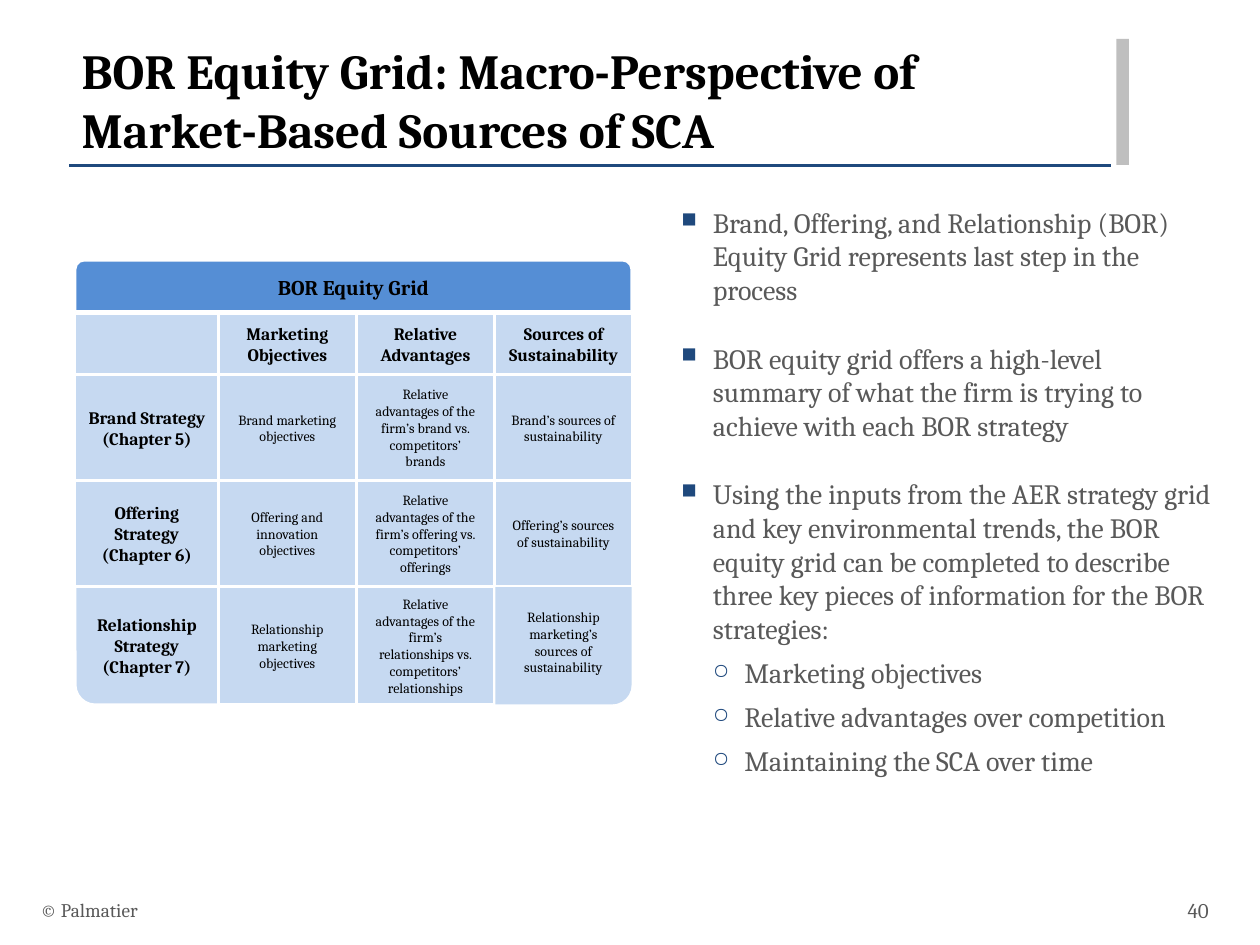
from lxml import etree
from pptx import Presentation
from pptx import util as u
from pptx.dml.color import RGBColor
from pptx.enum import shapes, text
from pptx.oxml.ns import qn

COLORS = {
    "navy": "1F497D", "gray": "BFBFBF", "body": "595959", "black": "000000",
    "header": "558ED5", "cell": "C6D9F1", "white": "FFFFFF",
}
CENTER, RIGHT = text.PP_ALIGN.CENTER, text.PP_ALIGN.RIGHT
MIDDLE, TOP = text.MSO_ANCHOR.MIDDLE, text.MSO_ANCHOR.TOP
SHAPE = shapes.MSO_SHAPE

TITLE = {"size": u.Pt(28), "bold": True}
GRID_TITLE = {"size": u.Pt(12), "bold": True}
GRID_LABEL = {"size": u.Pt(10), "bold": True}
GRID_TEXT = {"size": u.Pt(8)}
BODY = {"size": u.Pt(16)}


def rgb(name):
    return RGBColor.from_string(COLORS[name])


class SlideBuilder:
    font = "Cambria"

    def __init__(self, slide):
        self.slide = slide

    def fill_text(self, frame, lines, style, color="black", align=None, anchor=MIDDLE):
        settings = {"word_wrap": True, "vertical_anchor": anchor,
                    "margin_left": u.Pt(7.2), "margin_right": u.Pt(7.2),
                    "margin_top": u.Pt(3.6), "margin_bottom": u.Pt(3.6)}
        for name, value in settings.items():
            setattr(frame, name, value)
        for index, line in enumerate(lines):
            paragraph = frame.add_paragraph() if index else frame.paragraphs[0]
            paragraph.alignment = align
            run = paragraph.add_run()
            run.text = line
            for name, value in {"name": self.font, **style}.items():
                setattr(run.font, name, value)
            run.font.color.rgb = rgb(color)

    def box(self, bounds, fill, kind=SHAPE.RECTANGLE, border=True, lines=(), style=None):
        shape = self.slide.shapes.add_shape(kind, *map(u.Pt, bounds))
        shape.shadow.inherit = False
        shape.fill.solid()
        shape.fill.fore_color.rgb = rgb(fill)
        if border:
            shape.line.color.rgb = rgb("white")
            shape.line.width = u.Pt(1)
        else:
            shape.line.fill.background()
        if lines:
            self.fill_text(shape.text_frame, lines, style, align=CENTER)
        return shape

    def label(self, bounds, lines, style, **options):
        shape = self.slide.shapes.add_textbox(*map(u.Pt, bounds))
        self.fill_text(shape.text_frame, lines, style, **options)
        return shape

    def rule(self, start, end, color, width):
        line = self.slide.shapes.add_connector(
            shapes.MSO_CONNECTOR.STRAIGHT, *map(u.Pt, start + end))
        line.line.color.rgb = rgb(color)
        line.line.width = u.Pt(width)
        etree.SubElement(line._element.spPr, qn("a:effectLst"))

    def bullets(self, bounds, items):
        """Each item is a (level, text) pair."""
        shape = self.label(bounds, [line for _, line in items], BODY,
                           color="body", anchor=TOP)
        for index, paragraph in enumerate(shape.text_frame.paragraphs):
            level = items[index][0]
            properties = paragraph._p.get_or_add_pPr()
            properties.set("marL", str(u.Pt(18 * (level + 1))))
            properties.set("indent", str(u.Pt(-18)))
            color = etree.SubElement(properties, qn("a:buClr"))
            etree.SubElement(color, qn("a:srgbClr"), val=COLORS["navy"])
            etree.SubElement(properties, qn("a:buSzPct"), val="75000")
            etree.SubElement(properties, qn("a:buChar"), char="■○"[level])
            if index:
                paragraph.space_before = u.Pt((20, 6)[level])


def build_grid(builder):
    # Column and row starts and sizes; the first column holds the row labels
    columns = [(43.2, 81.4)] + [(125.3 + 78.9 * i, 77.8) for i in range(3)]
    rows = [(179.3, 34.6), (214.6, 59.8), (275, 59.8), (335.5, 67)]
    cells = [
        [[], ["Marketing Objectives"], ["Relative Advantages"],
         ["Sources of Sustainability"]],
        [["Brand Strategy", "(Chapter 5)"], ["Brand marketing objectives"],
         ["Relative advantages of the firm’s brand vs. competitors’ brands"],
         ["Brand’s sources of sustainability"]],
        [["Offering Strategy", "(Chapter 6)"], ["Offering and innovation objectives"],
         ["Relative advantages of the firm’s offering vs. competitors’ offerings"],
         ["Offering’s sources of sustainability"]],
        [["Relationship Strategy", "(Chapter 7)"], ["Relationship marketing objectives"],
         ["Relative advantages of the firm’s relationships vs. competitors’ relationships"],
         ["Relationship marketing’s sources of sustainability"]],
    ]
    builder.box((43.2, 149, 317.5, 28.8), "header", SHAPE.ROUND_2_SAME_RECTANGLE,
                lines=["BOR Equity Grid"], style=GRID_TITLE)
    for row, (top, height) in enumerate(rows):
        for column, (left, width) in enumerate(columns):
            bounds = (left, top, width, height)
            lines = cells[row][column]
            style = GRID_TEXT if row and column else GRID_LABEL
            if row == 3 and column in (0, 3):
                # Bottom corner cells: turned shape below, upright text above
                corner = builder.box(bounds, "cell", SHAPE.ROUND_1_RECTANGLE,
                                     border=column == 0)
                corner.rotation = 180
                if column == 3:
                    corner._element.spPr.get_or_add_xfrm().set("flipH", "1")
                text_bounds = (left, top + 1.5, width, 59.8 if column else 64)
                builder.label(text_bounds, lines, style, align=CENTER)
            else:
                builder.box(bounds, "cell", lines=lines, style=style)


def main():
    presentation = Presentation()
    presentation.slide_width, presentation.slide_height = u.Pt(720), u.Pt(540)
    builder = SlideBuilder(presentation.slides.add_slide(presentation.slide_layouts[6]))

    # Title with underline and side bar
    builder.rule((39.6, 94.5), (635, 94.5), "navy", 2)
    builder.box((638, 22.3, 7.2, 72), "gray", border=False)
    builder.label((39.6, 19.5, 595, 75),
                  ["BOR Equity Grid: Macro-Perspective of Market-Based Sources of SCA"],
                  TITLE, anchor=TOP)

    # Explanation
    builder.bullets((382.3, 113.8, 320.5, 389.5), [
        (0, "Brand, Offering, and Relationship (BOR) Equity Grid represents last step "
            "in the process"),
        (0, "BOR equity grid offers a high-level summary of what the firm is trying to "
            "achieve with each BOR strategy"),
        (0, "Using the inputs from the AER strategy grid and key environmental trends, "
            "the BOR equity grid can be completed to describe three key pieces of "
            "information for the BOR strategies:"),
        (1, "Marketing objectives"),
        (1, "Relative advantages over competition"),
        (1, "Maintaining the SCA over time"),
    ])

    build_grid(builder)

    # Footer
    builder.label((16, 505.5, 482, 28.8), ["© Palmatier"], {"size": u.Pt(11)}, color="body")
    builder.label((653.8, 505.5, 44, 28.8), ["40"], {"size": u.Pt(12)},
                  color="body", align=RIGHT)

    presentation.save("out.pptx")


if __name__ == "__main__":
    main()
